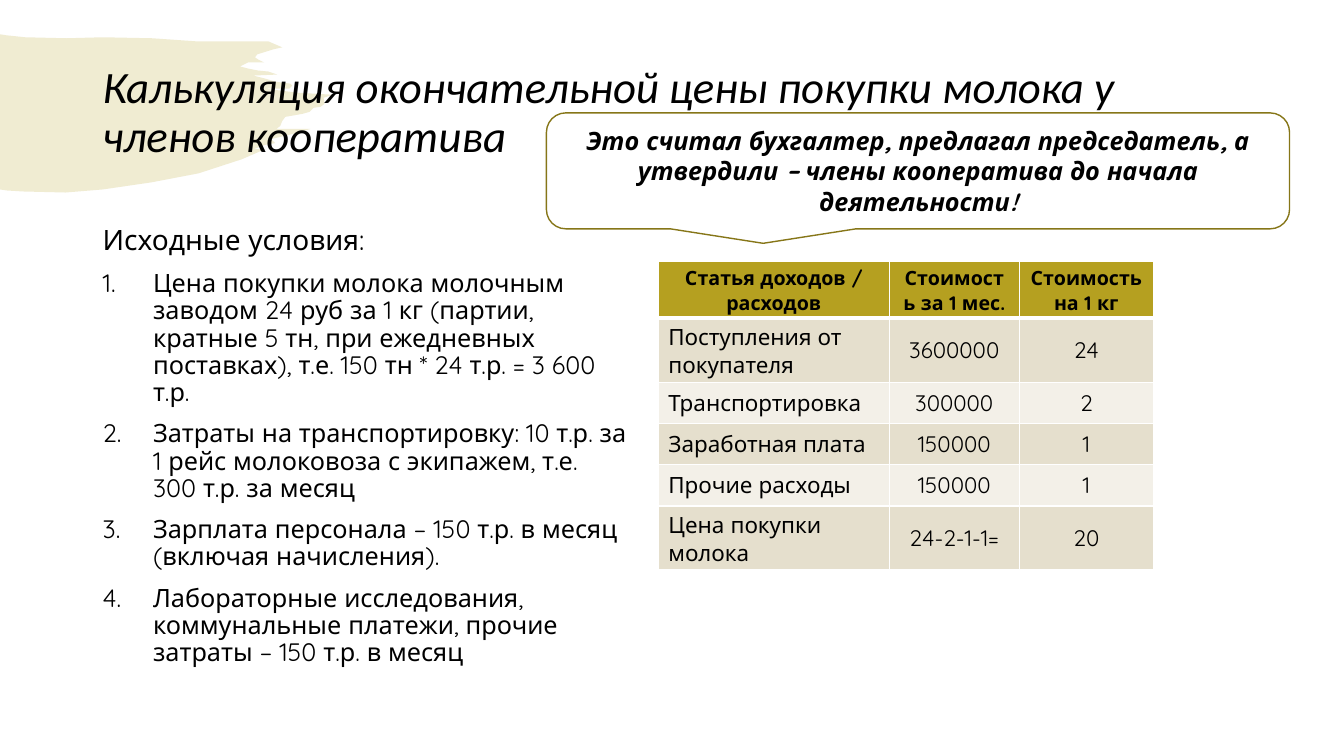
from lxml.etree import SubElement
from pptx import Presentation
from pptx.dml.color import RGBColor
from pptx.enum.shapes import MSO_SHAPE
from pptx.enum.text import MSO_ANCHOR, PP_ALIGN
from pptx.oxml.ns import qn
from pptx.util import Inches, Pt

BLACK = RGBColor(0x00, 0x00, 0x00)
WHITE = RGBColor(0xFF, 0xFF, 0xFF)
OLIVE = RGBColor(0xB5, 0xA0, 0x20)
DARK_OLIVE = RGBColor(0x86, 0x76, 0x18)
SAND = RGBColor(0xE5, 0xDF, 0xCD)
LIGHT_SAND = RGBColor(0xF3, 0xF0, 0xE8)
TITLE_FONT = "Calibri"
BODY_FONT = "Quicksand"

BRUSH_OUTLINE = [
    (0, 0.34), (0.06, 0.35), (0.25, 0.37), (0.66, 0.38), (1.02, 0.37),
    (1.51, 0.38), (1.94, 0.41), (2.48, 0.41), (2.66, 0.41), (2.8, 0.47),
    (2.71, 0.49), (2.55, 0.54), (2.53, 0.57), (2.56, 0.59), (2.62, 0.62),
    (2.46, 0.62), (2.38, 0.66), (2.46, 0.68), (2.56, 0.7), (2.66, 0.71),
    (2.75, 0.74), (2.51, 0.75), (2.63, 0.78), (2.73, 0.81), (2.8, 0.82),
    (2.88, 0.83), (2.9, 0.85), (2.87, 0.88), (2.84, 0.88), (2.63, 0.88),
    (2.95, 0.92), (3.3, 0.94), (3.21, 0.97), (3.22, 1.03), (3.18, 1.06),
    (3.11, 1.07), (3.07, 1.11), (3, 1.13), (2.83, 1.16), (2.8, 1.2),
    (2.78, 1.25), (2.74, 1.28), (3.08, 1.28), (2.9, 1.33), (2.69, 1.38),
    (2.73, 1.42), (2.62, 1.44), (2.52, 1.48), (2.63, 1.48), (2.4, 1.58),
    (1.97, 1.72), (1.5, 1.81), (1.02, 1.88), (0.65, 1.91), (0.23, 1.9),
    (0.07, 1.89), (0, 1.88),
]
CONDITIONS = [
    "Цена покупки молока молочным заводом 24 руб за 1 кг (партии, кратные 5 тн, "
    "при ежедневных поставках), т.е. 150 тн * 24 т.р. = 3 600 т.р.",
    "Затраты на транспортировку: 10 т.р. за 1 рейс молоковоза с экипажем, "
    "т.е. 300 т.р. за месяц",
    "Зарплата персонала – 150 т.р. в месяц (включая начисления).",
    "Лабораторные исследования, коммунальные платежи, прочие затраты – "
    "150 т.р. в месяц",
]
COSTS = [
    ("Статья доходов / расходов", "Стоимость за 1 мес.", "Стоимость на 1 кг"),
    ("Поступления от покупателя", "3600000", "24"),
    ("Транспортировка", "300000", "2"),
    ("Заработная плата", "150000", "1"),
    ("Прочие расходы", "150000", "1"),
    ("Цена покупки молока", "24-2-1-1=", "20"),
]
COLUMN_WIDTHS = [2.29, 1.29, 1.33]
ROW_HEIGHT = 0.41


def add_run(paragraph, text, size, font=BODY_FONT, bold=False, italic=False):
    run = paragraph.add_run()
    run.text = text
    run.font.name = font
    run.font.size = Pt(size)
    run.font.bold = bold
    run.font.italic = italic
    run.font.color.rgb = BLACK


def add_text_frame(slide, left, top, width, height):
    box = slide.shapes.add_textbox(
        Inches(left), Inches(top), Inches(width), Inches(height))
    box.text_frame.word_wrap = True
    return box.text_frame


def add_brush_stroke(slide):
    start, *rest = BRUSH_OUTLINE
    builder = slide.shapes.build_freeform(
        Inches(start[0]), Inches(start[1]))
    builder.add_line_segments([(Inches(x), Inches(y)) for x, y in rest])
    brush = builder.convert_to_shape()
    brush.shadow.inherit = False
    brush.line.fill.background()
    brush.fill.solid()
    brush.fill.fore_color.rgb = OLIVE
    color = brush.fill._xPr.find(qn("a:solidFill"))[0]
    SubElement(color, qn("a:alpha"), val="20000")


def add_title(slide):
    frame = add_text_frame(slide, 0.92, 0.4, 11.5, 1.45)
    frame.vertical_anchor = MSO_ANCHOR.MIDDLE
    title = frame.paragraphs[0]
    title.line_spacing = 0.9
    add_run(title, "Калькуляция окончательной цены покупки молока у членов кооператива",
            32, TITLE_FONT, italic=True)


def number_paragraph(paragraph):
    properties = paragraph._p.get_or_add_pPr()
    properties.set("marL", str(Inches(0.5)))
    properties.set("indent", str(-Inches(0.5)))
    SubElement(properties, qn("a:buFont"), typeface="+mj-lt")
    SubElement(properties, qn("a:buAutoNum"), type="arabicPeriod")


def add_conditions(slide):
    frame = add_text_frame(slide, 0.92, 2.2, 5.4, 4.55)
    heading = frame.paragraphs[0]
    add_run(heading, "Исходные условия:", 20)
    for condition in CONDITIONS:
        item = frame.add_paragraph()
        add_run(item, condition, 18)
    for paragraph in frame.paragraphs:
        paragraph.line_spacing = 0.9
        paragraph.space_before = Pt(10)
    for item in frame.paragraphs[1:]:
        number_paragraph(item)


def set_borders(cell, bottom):
    """Draw white borders of 1 pt, with the bottom one of the given width."""
    properties = cell._tc.get_or_add_tcPr()
    widths = {"lnL": 1, "lnR": 1, "lnT": 1, "lnB": bottom}
    for position, (side, width) in enumerate(widths.items()):
        border = SubElement(properties, qn(f"a:{side}"), w=str(Pt(width)))
        fill = SubElement(border, qn("a:solidFill"))
        SubElement(fill, qn("a:srgbClr"), val=str(WHITE))
        properties.insert(position, border)


def fill_cell(cell, text, row, column):
    header = row == 0
    cell.fill.solid()
    cell.fill.fore_color.rgb = OLIVE if header else SAND if row % 2 else LIGHT_SAND
    cell.vertical_anchor = MSO_ANCHOR.TOP if header else MSO_ANCHOR.MIDDLE
    paragraph = cell.text_frame.paragraphs[0]
    paragraph.alignment = PP_ALIGN.CENTER if header or column else PP_ALIGN.LEFT
    add_run(paragraph, text, 14 if header else 16, bold=header)
    set_borders(cell, 3 if header else 1)


def add_cost_table(slide):
    table = slide.shapes.add_table(
        len(COSTS), len(COLUMN_WIDTHS), Inches(6.53), Inches(2.59),
        Inches(sum(COLUMN_WIDTHS)), Inches(ROW_HEIGHT * len(COSTS))).table
    for column, width in zip(table.columns, COLUMN_WIDTHS):
        column.width = Inches(width)
    for row, texts in enumerate(COSTS):
        table.rows[row].height = Inches(ROW_HEIGHT)
        for column, text in enumerate(texts):
            fill_cell(table.cell(row, column), text, row, column)


def add_callout(slide):
    callout = slide.shapes.add_shape(
        MSO_SHAPE.ROUNDED_RECTANGULAR_CALLOUT,
        Inches(5.42), Inches(1.12), Inches(7.37), Inches(1.15))
    callout.shadow.inherit = False
    callout.fill.solid()
    callout.fill.fore_color.rgb = WHITE
    callout.line.color.rgb = DARK_OLIVE
    callout.line.width = Pt(1)
    frame = callout.text_frame
    frame.word_wrap = True
    frame.vertical_anchor = MSO_ANCHOR.MIDDLE
    remark = frame.paragraphs[0]
    remark.alignment = PP_ALIGN.CENTER
    add_run(remark, "Это считал бухгалтер, предлагал председатель, а утвердили – "
            "члены кооператива до начала деятельности!", 18, bold=True, italic=True)


def main():
    presentation = Presentation()
    presentation.slide_width = Inches(13.33)
    presentation.slide_height = Inches(7.5)
    slide = presentation.slides.add_slide(presentation.slide_layouts[6])
    add_brush_stroke(slide)
    add_title(slide)
    add_conditions(slide)
    add_cost_table(slide)
    add_callout(slide)
    presentation.save("out.pptx")


if __name__ == "__main__":
    main()
